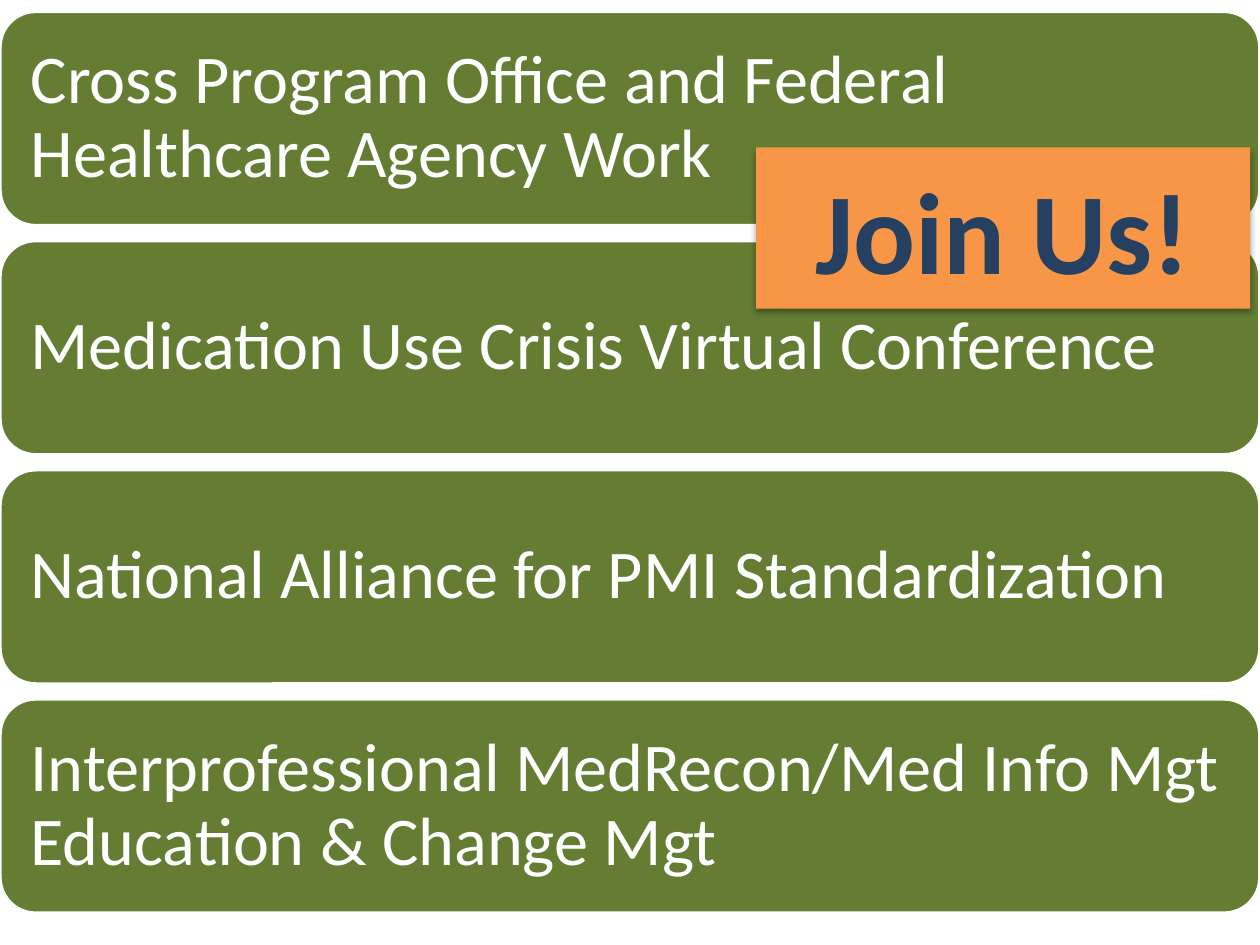
from dataclasses import dataclass

from lxml import etree
from pptx import Presentation
from pptx.dml.color import RGBColor
from pptx.enum.shapes import MSO_SHAPE
from pptx.enum.text import MSO_ANCHOR, MSO_AUTO_SIZE, PP_ALIGN
from pptx.oxml.ns import qn
from pptx.util import Cm, Pt

ROUNDED = MSO_SHAPE.ROUNDED_RECTANGLE
MIDDLE = MSO_ANCHOR.MIDDLE
NO_FIT = MSO_AUTO_SIZE.NONE
LEFT, CENTER = PP_ALIGN.LEFT, PP_ALIGN.CENTER
TITLE_ONLY = 5


@dataclass(frozen=True)
class Theme:
    font: str = "Calibri"
    band: RGBColor = RGBColor(0x64, 0x7D, 0x33)
    white: RGBColor = RGBColor(0xFF, 0xFF, 0xFF)
    callout: RGBColor = RGBColor(0xF7, 0x96, 0x46)
    callout_text: RGBColor = RGBColor(0x25, 0x40, 0x61)
    shadow: str = "000000"
    band_size: Pt = Pt(39)
    callout_size: Pt = Pt(66)


def apply_format(target, values):
    for name, value in values.items():
        setattr(target, name, value)


class SlideBuilder:
    def __init__(self, slide, theme):
        self.slide = slide
        self.theme = theme

    def add_label(self, shape, text, align, inset, size, color, bold=False):
        frame = shape.text_frame
        frame.text = text
        apply_format(frame, {
            "word_wrap": True, "auto_size": NO_FIT, "vertical_anchor": MIDDLE,
            "margin_left": inset, "margin_right": inset,
            "margin_top": inset, "margin_bottom": inset,
        })
        paragraph = frame.paragraphs[0]
        paragraph.alignment = align
        apply_format(paragraph.font, {"name": self.theme.font, "size": size, "bold": bold})
        paragraph.font.color.rgb = color
        return paragraph

    def band(self, text, top, width, height):
        band = self.slide.shapes.add_shape(ROUNDED, 0, top, width, height)
        band.shadow.inherit = False
        band.fill.solid()
        band.fill.fore_color.rgb = self.theme.band
        band.line.color.rgb = self.theme.white
        band.line.width = Pt(2)
        paragraph = self.add_label(band, text, LEFT, Cm(0.41),
                                   self.theme.band_size, self.theme.white)
        paragraph.line_spacing = 0.9

    def callout_title(self, text, left, top, width, height):
        title = self.slide.shapes.title
        apply_format(title, {"left": left, "top": top, "width": width, "height": height})
        title.fill.solid()
        title.fill.fore_color.rgb = self.theme.callout
        title.line.fill.background()
        self.add_label(title, text, CENTER, Cm(0.2), self.theme.callout_size,
                       self.theme.callout_text, bold=True)
        self.drop_shadow(title)
        # Bring the title in front of the bands
        self.slide.shapes._spTree.append(title._element)

    def drop_shadow(self, shape):
        effects = etree.SubElement(shape._element.spPr, qn("a:effectLst"))
        shadow = etree.SubElement(effects, qn("a:outerShdw"), {
            "blurRad": str(Pt(3.5)), "dist": str(Pt(2.2)),
            "dir": "5400000", "rotWithShape": "0",
        })
        color = etree.SubElement(shadow, qn("a:srgbClr"), val=self.theme.shadow)
        etree.SubElement(color, qn("a:alpha"), val="32000")


def main():
    presentation = Presentation()
    presentation.slide_width = Cm(25.4)
    presentation.slide_height = Cm(19.05)
    slide = presentation.slides.add_slide(presentation.slide_layouts[TITLE_ONLY])
    builder = SlideBuilder(slide, Theme())

    # Initiatives, stacked at an equal pitch
    initiatives = [
        "Cross Program Office and Federal Healthcare Agency Work",
        "Medication Use Crisis Virtual Conference",
        "National Alliance for PMI Standardization",
        "Interprofessional MedRecon/Med Info Mgt Education & Change Mgt",
    ]
    first_top, pitch = Cm(0.23), Cm(4.62)
    for row, initiative in enumerate(initiatives):
        builder.band(initiative, first_top + row * pitch,
                     presentation.slide_width, Cm(4.32))

    # Invitation laid over the bands
    builder.callout_title("Join Us!", Cm(15.24), Cm(2.97), Cm(9.96), Cm(3.25))

    presentation.save("out.pptx")


if __name__ == "__main__":
    main()
